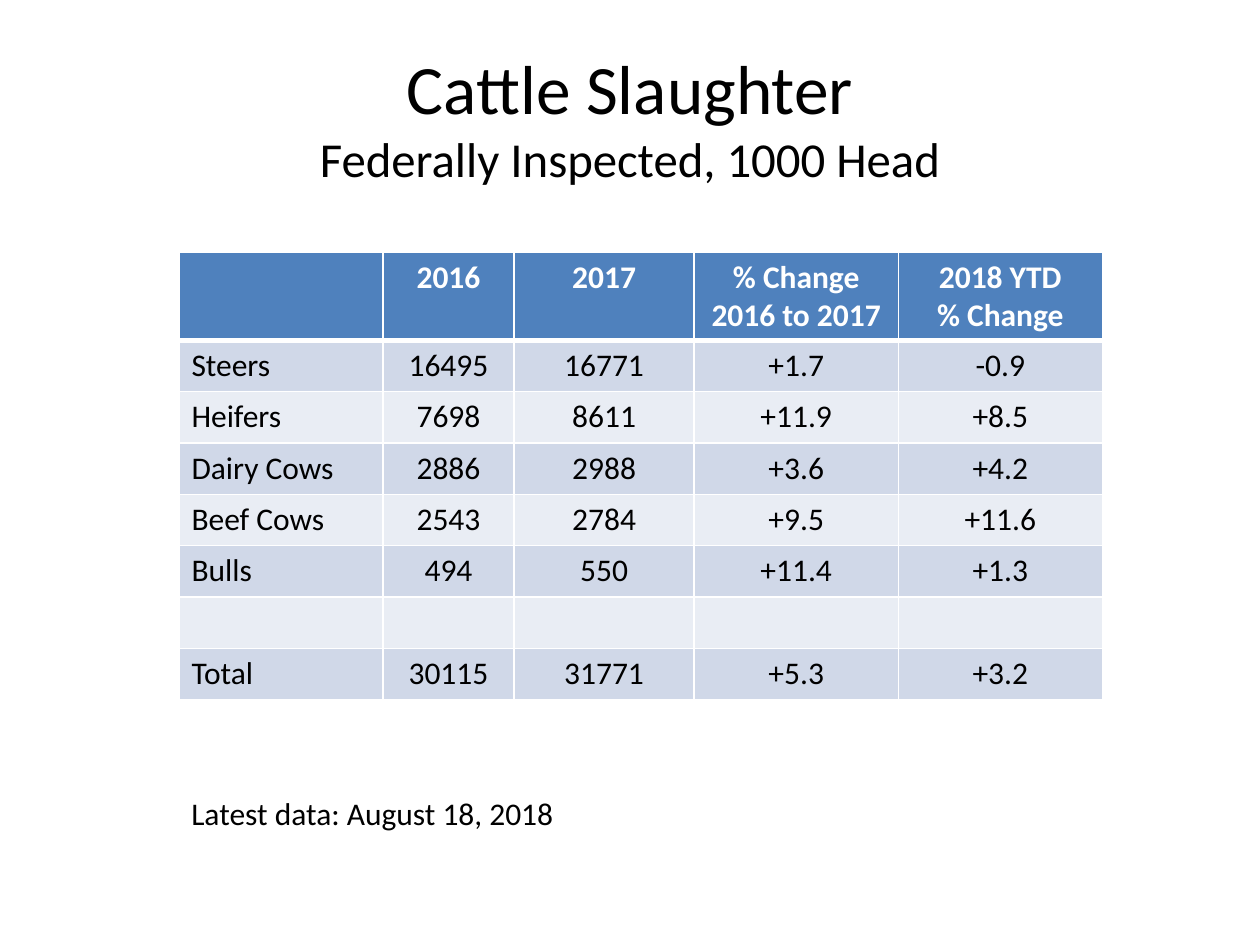
from lxml import etree
from pptx import Presentation
from pptx import util as u
from pptx.dml.color import RGBColor
from pptx.enum import text
from pptx.oxml import ns

COLORS = {"header": "4F81BD", "odd": "D0D8E8", "even": "E9EDF4",
          "light": "FFFFFF", "dark": "000000"}
FONT = "Calibri"
COLUMN_WIDTHS = [1.62, 1.04, 1.43, 1.62, 1.62]
HEADER_HEIGHT, ROW_HEIGHT = 0.69, 0.41
ROWS = [
    ["", "2016", "2017", "% Change 2016 to 2017", "2018 YTD\n% Change"],
    ["Steers", "16495", "16771", "+1.7", "-0.9"],
    ["Heifers", "7698", "8611", "+11.9", "+8.5"],
    ["Dairy Cows", "2886", "2988", "+3.6", "+4.2"],
    ["Beef Cows", "2543", "2784", "+9.5", "+11.6"],
    ["Bulls", "494", "550", "+11.4", "+1.3"],
    [""] * 5,
    ["Total", "30115", "31771", "+5.3", "+3.2"],
]


def format_run(run, size, color="dark", bold=False):
    run.font.name = FONT
    run.font.size = u.Pt(size)
    run.font.bold = bold
    run.font.color.rgb = RGBColor.from_string(COLORS[color])


def add_text(slide, box, content, sizes, alignment, anchor):
    shape = slide.shapes.add_textbox(*map(u.Inches, box))
    frame = shape.text_frame
    frame.word_wrap = True
    frame.vertical_anchor = anchor
    frame.text = content
    paragraph = frame.paragraphs[0]
    paragraph.alignment = alignment
    for run, size in zip(paragraph.runs, sizes):
        format_run(run, size)


def add_borders(cell, widths):
    properties = cell._tc.get_or_add_tcPr()
    for position, (side, width) in enumerate(widths.items()):
        line = etree.Element(ns.qn("a:ln" + side), w=str(u.Pt(width)))
        fill = etree.SubElement(line, ns.qn("a:solidFill"))
        etree.SubElement(fill, ns.qn("a:srgbClr"), val=COLORS["light"])
        properties.insert(position, line)


def fill_cell(cell, content, row, column):
    header = row == 0
    band = "header" if header else "odd" if row % 2 else "even"
    cell.fill.solid()
    cell.fill.fore_color.rgb = RGBColor.from_string(COLORS[band])
    add_borders(cell, {"L": 1, "R": 1, "T": 3 if row == 1 else 1, "B": 3 if header else 1})
    cell.text_frame.text = content
    for paragraph in cell.text_frame.paragraphs:
        if column or header:
            paragraph.alignment = text.PP_ALIGN.CENTER
        for run in paragraph.runs:
            format_run(run, 18, "light" if header else "dark", header)


def add_slaughter_table(slide, box):
    frame = slide.shapes.add_table(len(ROWS), len(COLUMN_WIDTHS), *map(u.Inches, box))
    table = frame.table
    for column, width in zip(table.columns, COLUMN_WIDTHS):
        column.width = u.Inches(box[2] * width / sum(COLUMN_WIDTHS))
    total = HEADER_HEIGHT + ROW_HEIGHT * (len(ROWS) - 1)
    for row, values in enumerate(ROWS):
        height = ROW_HEIGHT if row else HEADER_HEIGHT
        table.rows[row].height = u.Inches(box[3] * height / total)
        for column, content in enumerate(values):
            fill_cell(table.cell(row, column), content, row, column)


def main():
    presentation = Presentation()
    presentation.slide_width = u.Inches(10)
    presentation.slide_height = u.Inches(7.5)
    slide = presentation.slides.add_slide(presentation.slide_layouts[6])
    add_text(slide, (0.5, 0.3, 9, 1.25),
             "Cattle Slaughter\vFederally Inspected, 1000 Head", (39.6, 27.9),
             text.PP_ALIGN.CENTER, text.MSO_ANCHOR.MIDDLE)
    add_slaughter_table(slide, (1.42, 2, 7.33, 3.54))
    add_text(slide, (1.42, 6.25, 3.5, 0.4), "Latest data: August 18, 2018", (18,),
             text.PP_ALIGN.LEFT, text.MSO_ANCHOR.TOP)
    presentation.save("out.pptx")


if __name__ == "__main__":
    main()
